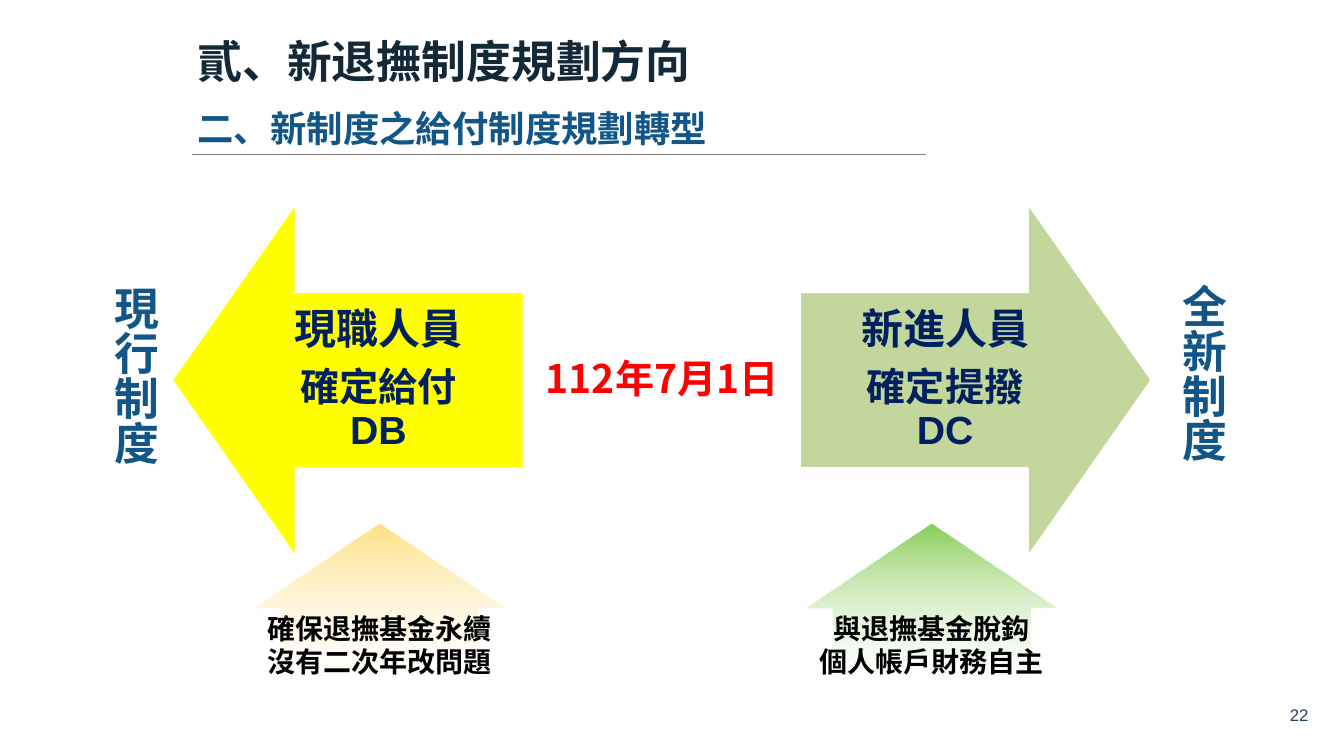
from lxml.etree import SubElement
from pptx import Presentation
from pptx.dml.color import RGBColor
from pptx.enum.shapes import MSO_CONNECTOR as Connector, MSO_SHAPE as Preset
from pptx.enum.text import MSO_ANCHOR as Anchor, MSO_AUTO_SIZE as AutoSize, PP_ALIGN as Align
from pptx.oxml.ns import qn
from pptx.util import Pt

CJK = "Noto Sans CJK SC"
COLORS = {
    "title": "142938", "blue": "115686", "navy": "002060", "red": "FF0000",
    "number": "254061", "black": "000000", "white": "FFFFFF", "rule": "808080",
    "yellow": "FFFF00", "olive": "C3D69B", "amber": "FFE285", "green": "88CE58",
}
ARROW_TOP, ARROW_SIZE = 146.2, 250.6
HEAD_LENGTH, SHAFT_INSET = 87.8, 62.6


def color(name):
    return RGBColor.from_string(COLORS[name])


def set_values(target, values):
    for name, value in values.items():
        setattr(target, name, value)


def write(shape, lines, tone, frame=None, layout=None, face=CJK, bold=True):
    """Fill a shape with (text, size) lines; a vertical tab breaks a line."""
    box = shape.text_frame
    set_values(box, {"word_wrap": True, "auto_size": AutoSize.NONE,
                     "vertical_anchor": Anchor.TOP, **(frame or {})})
    for index, (text, size) in enumerate(lines):
        para = box.add_paragraph() if index else box.paragraphs[0]
        para.text = text
        set_values(para, layout or {})
        for span in para.runs:
            set_values(span.font, {"size": Pt(size), "bold": bold, "name": face})
            span.font.color.rgb = color(tone)
            SubElement(span.font._element, qn("a:ea"), typeface=CJK)
    return box


def add_text(page, place, text, size, tone, **options):
    shape = page.shapes.add_textbox(*map(Pt, place))
    return write(shape, [(text, size)], tone, **options)


def add_title(page, text):
    title = page.shapes.title
    set_values(title, dict(zip(("left", "top", "width", "height"),
                               map(Pt, (133.9, 20.2, 370, 46)))))
    write(title, [(text, 32)], "title", {"word_wrap": False}, {"alignment": Align.LEFT})


def add_vertical_label(page, left, top, text):
    box = add_text(page, (left, top, 53.3, 148.3), text, 32, "blue", face="Arial")
    box._txBody.bodyPr.set("vert", "eaVert")


def add_side_arrow(page, left, points_right, fill, lines):
    middle = ARROW_SIZE / 2
    outline = [
        (HEAD_LENGTH, ARROW_SIZE), (0, middle), (HEAD_LENGTH, 0),
        (HEAD_LENGTH, SHAFT_INSET), (ARROW_SIZE, SHAFT_INSET),
        (ARROW_SIZE, ARROW_SIZE - SHAFT_INSET), (HEAD_LENGTH, ARROW_SIZE - SHAFT_INSET),
    ]
    corners = [(Pt(left + (ARROW_SIZE - x if points_right else x)), Pt(ARROW_TOP + y))
               for x, y in outline]
    builder = page.shapes.build_freeform(*corners[0], scale=1.0)
    builder.add_line_segments(corners[1:], close=True)
    arrow = builder.convert_to_shape()
    arrow.shadow.inherit = False
    arrow.fill.solid()
    arrow.fill.fore_color.rgb = color(fill)
    arrow.line.color.rgb = color("white")
    arrow.line.width = Pt(1)

    head_margin, shaft_margin = Pt(55.4), Pt(11.5)
    frame = {
        "vertical_anchor": Anchor.MIDDLE,
        "margin_left": shaft_margin if points_right else head_margin,
        "margin_right": head_margin if points_right else shaft_margin,
        "margin_top": Pt(74.2), "margin_bottom": Pt(74.2),
    }
    box = write(arrow, lines, "navy", frame,
                {"alignment": Align.CENTER, "line_spacing": 0.9}, face="Arial")
    for para in box.paragraphs:
        gap = SubElement(para._p.get_or_add_pPr(), qn("a:spcAft"))
        SubElement(gap, qn("a:spcPct"), val="35000")


def add_up_arrow(page, left, fill, lines):
    """Add an upward arrow that fades to clear at its foot."""
    arrow = page.shapes.add_shape(Preset.UP_ARROW, *map(Pt, (left, 373.7, 180, 126)))
    arrow.adjustments[0], arrow.adjustments[1] = 0.783, 0.482
    arrow.shadow.inherit = False
    arrow.line.fill.background()
    arrow.fill.gradient()
    arrow.fill.gradient_angle = 270
    for stop, tone in zip(arrow.fill.gradient_stops, (fill, "white")):
        stop.color.rgb = color(tone)
    clear = arrow._element.spPr.findall(".//" + qn("a:srgbClr"))[-1]
    SubElement(clear, qn("a:alpha"), val="0")
    write(arrow, [(line, 20) for line in lines], "black",
          {"word_wrap": False, "vertical_anchor": Anchor.MIDDLE},
          {"alignment": Align.CENTER})


def add_rule(page, left, right, top):
    rule = page.shapes.add_connector(Connector.STRAIGHT, *map(Pt, (left, top, right, top)))
    rule.line.color.rgb = color("rule")
    rule.line.width = Pt(0.5)
    SubElement(rule._element.spPr, qn("a:effectLst"))


def main():
    deck = Presentation()
    deck.slide_width, deck.slide_height = Pt(960), Pt(540)
    page = deck.slides.add_slide(deck.slide_layouts[5])

    add_title(page, "貳、新退撫制度規劃方向")
    add_side_arrow(page, 123.1, False, "yellow", [("現職人員", 30), ("確定給付\vDB", 28)])
    add_side_arrow(page, 571.7, True, "olive", [("新進人員", 30), ("確定提撥\vDC", 28)])
    add_text(page, (380.9, 249.8, 184.3, 41), "112年7月1日", 28, "red",
             layout={"alignment": Align.CENTER})
    add_vertical_label(page, 66.2, 197.3, "現行制度")
    add_vertical_label(page, 828.7, 195.8, "全新制度")
    add_up_arrow(page, 575.3, "green", ["與退撫基金脫鈎", "個人帳戶財務自主"])
    add_up_arrow(page, 181.4, "amber", ["確保退撫基金永續", "沒有二次年改問題"])
    add_text(page, (133.9, 72, 771.1, 38.9), "二、新制度之給付制度規劃轉型", 26, "blue",
             layout={"space_before": Pt(12)})
    add_rule(page, 137.5, 661.7, 110.2)
    add_text(page, (725.8, 496.1, 216, 28.8), "22", 12, "number",
             frame={"vertical_anchor": Anchor.MIDDLE},
             layout={"alignment": Align.RIGHT}, face="Arial", bold=False)
    deck.save("out.pptx")


if __name__ == "__main__":
    main()
